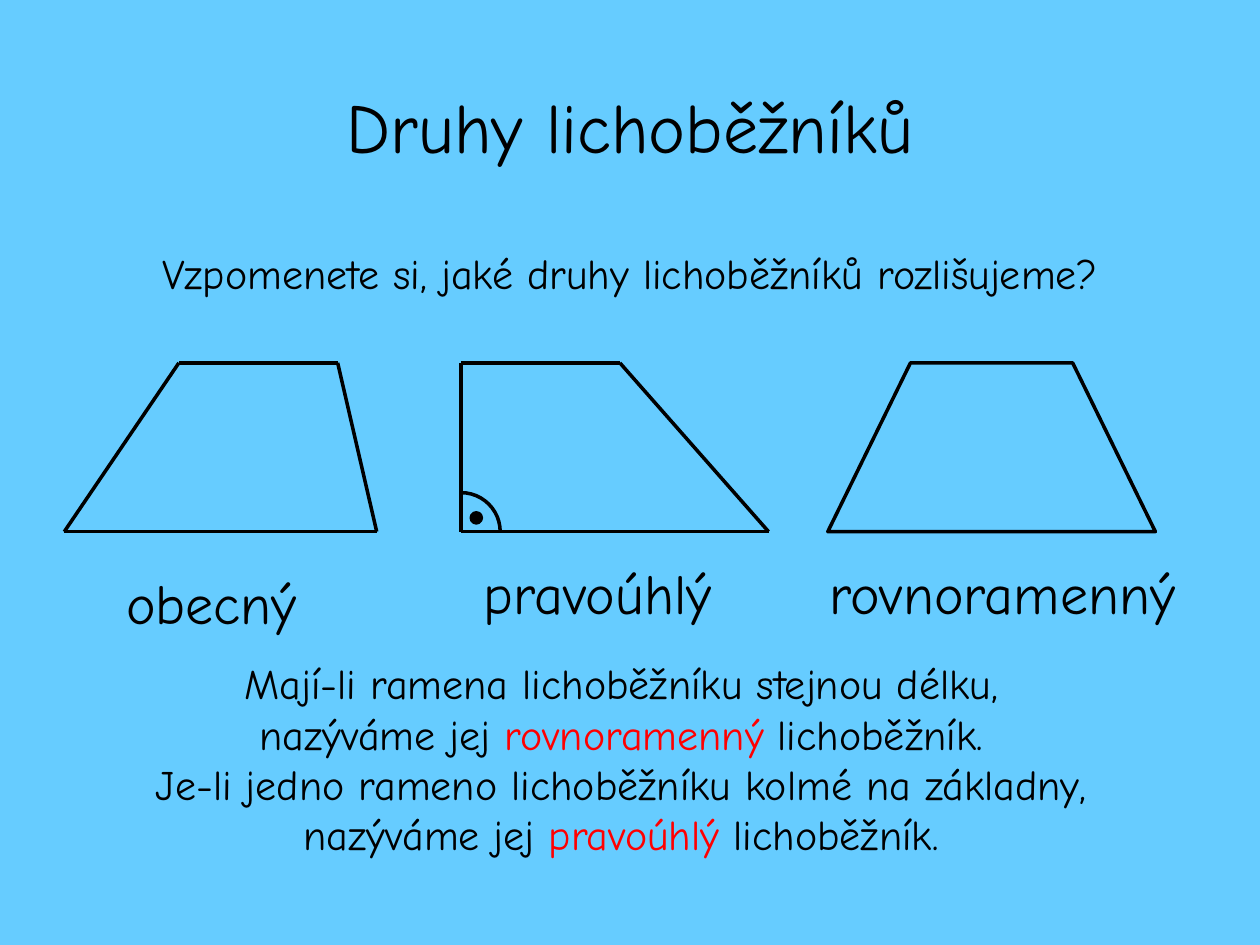
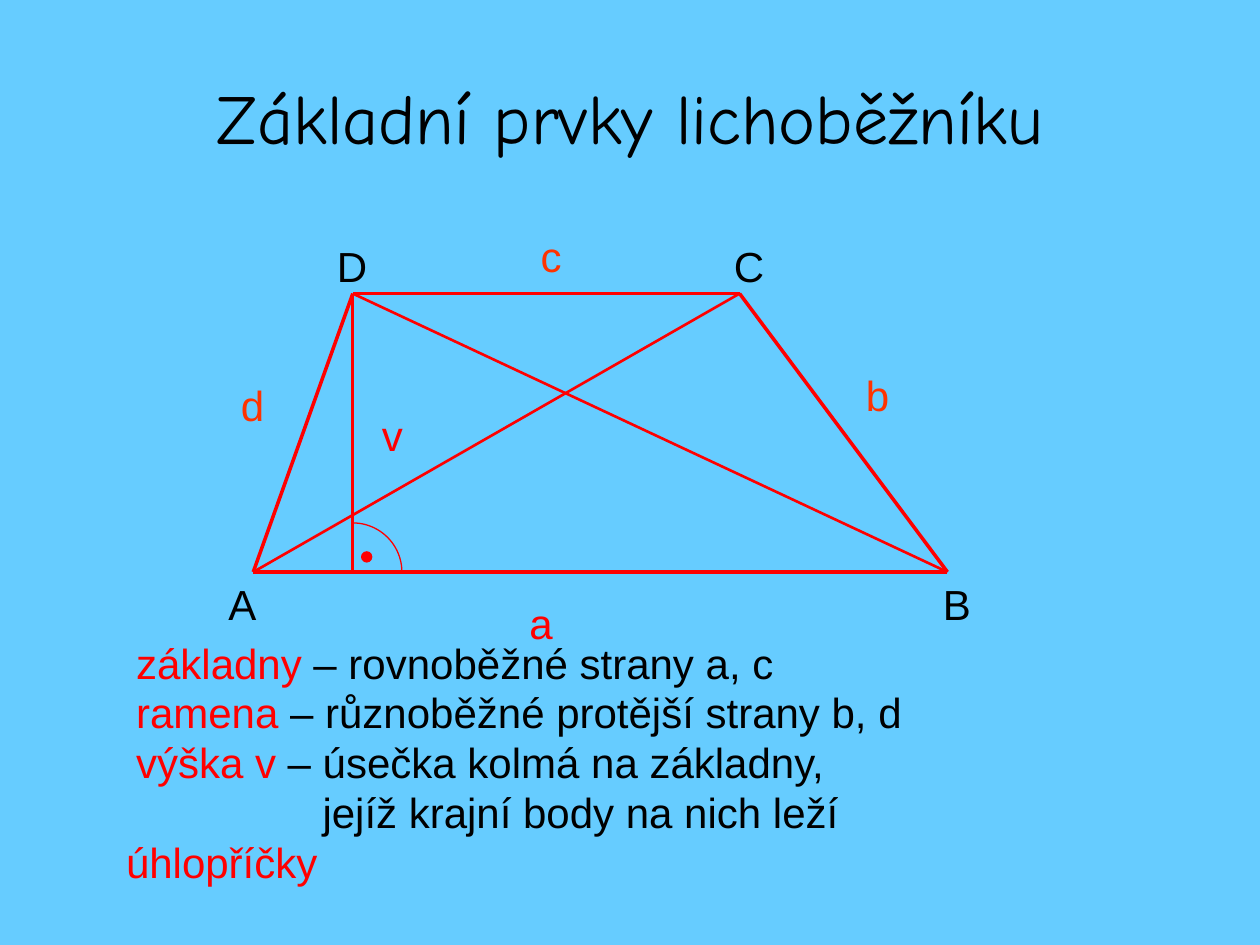
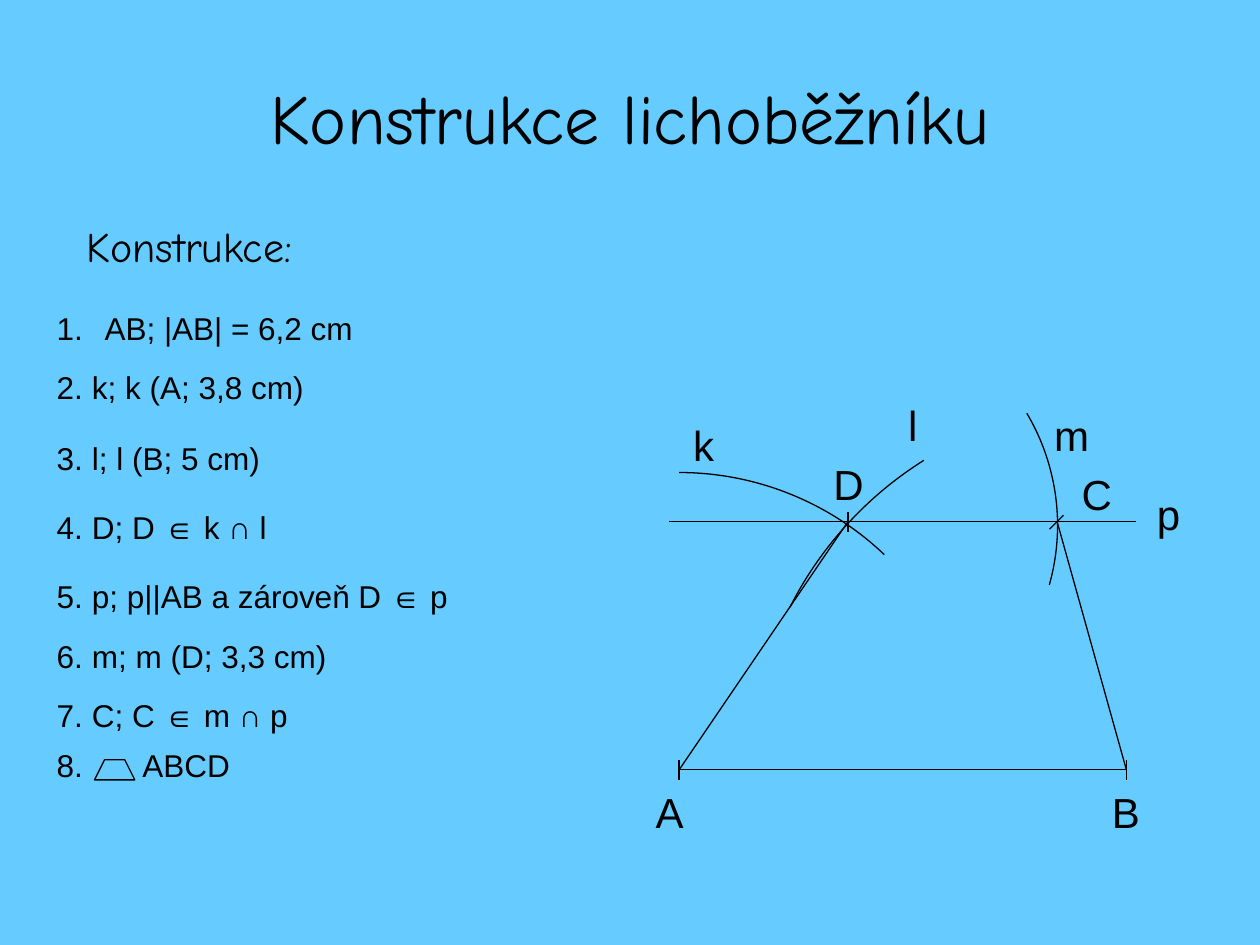
"""Build three slides on trapezoids: kinds, basic parts and construction."""
from math import atan2, degrees, hypot

from lxml.etree import SubElement
from pptx import Presentation
from pptx.dml.color import RGBColor
from pptx.enum.shapes import MSO_CONNECTOR as Link, MSO_SHAPE as Form
from pptx.enum.text import MSO_ANCHOR as Anchor, MSO_AUTO_SIZE as Fit, PP_ALIGN as Align
from pptx.oxml.ns import qn
from pptx.util import Inches, Pt

SKY = RGBColor(0x66, 0xCC, 0xFF)
BLACK = RGBColor(0, 0, 0)
RED = RGBColor(0xFF, 0, 0)
ORANGE = RGBColor(0xFF, 0x33, 0)
COMIC, ARIAL = "Comic Neue", "Arial"

KINDS = "Druhy lichoběžníků"
QUERY = "Vzpomenete si, jaké druhy lichoběžníků rozlišujeme?"
RULES = [
    [("Mají-li ramena lichoběžníku stejnou délku,", BLACK)],
    [("nazýváme jej ", BLACK), ("rovnoramenný ", RED), ("lichoběžník.", BLACK)],
    [("Je-li jedno rameno lichoběžníku kolmé na základny,", BLACK)],
    [("nazýváme jej ", BLACK), ("pravoúhlý ", RED), ("lichoběžník.", BLACK)],
]
QUADS = [
    [(0.51, 4.22), (2.99, 4.22), (2.68, 2.88), (1.42, 2.88)],
    [(3.66, 4.22), (6.1, 4.22), (4.92, 2.88), (3.66, 2.88)],
]
NAMES = [
    ("pravoúhlý", (3.74, 4.38, 2.28, 1.06), Align.LEFT),
    ("rovnoramenný", (6.34, 4.38, 3.23, 1.06), Align.CENTER),
]

PARTS = "Základní prvky lichoběžníku"
PART_PTS = {"A": (2.01, 4.54), "B": (7.52, 4.54), "C": (5.87, 2.33), "D": (2.8, 2.33)}
FOOT = (2.8, 4.54)
PART_TAGS = [
    ("a", 3.98, 4.69, RED), ("c", 4.06, 1.78, ORANGE), ("b", 6.65, 2.88, ORANGE),
    ("d", 1.69, 2.96, ORANGE), ("v", 2.8, 3.2, RED), ("A", 1.61, 4.54, BLACK),
    ("B", 7.28, 4.54, BLACK), ("C", 5.63, 1.86, BLACK), ("D", 2.48, 1.86, BLACK),
]
TERMS = [
    (0.08, [("základny", RED), (" – rovnoběžné strany a, c", BLACK)]),
    (0.08, [("ramena", RED), (" – různoběžné protější strany b, d", BLACK)]),
    (0.08, [("výška v", RED), (" – úsečka kolmá na základny,", BLACK)]),
    (1.56, [("jejíž krajní body na nich leží", BLACK)]),
    (0, [("úhlopříčky", RED)]),
]

BUILD = "Konstrukce lichoběžníku"
STEPS = [
    ("AB; |AB| = 6,2 cm", 0.38, 0),
    ("k; k (A; 3,8 cm)", 0.28, 0.47),
    ("l; l (B; 5 cm)", 0.28, 0.56),
    ("D; D ∈ k ∩ l", 0.28, 0.55),
    ("p; p||AB a zároveň D ∈ p", 0.28, 0.55),
    ("m; m (D; 3,3 cm)", 0.28, 0.47),
    ("C; C ∈ m ∩ p", 0.28, 0.47),
    ("ABCD", 0.68, 0.4),
]
STEP_PT = 21
A, B, C, D = (5.39, 6.11), (8.94, 6.11), (8.39, 4.14), (6.73, 4.14)
LINES = [(A, B), (B, C), (D, A), ((5.31, 4.14), (9.02, 4.14)), ((8.44, 4.09), (8.33, 4.2))]
ARCS = [
    (A, (5.39, 3.75), (7.02, 4.4)),
    ((8.9, 6.15), (6.27, 4.82), (7.33, 3.65)),
    ((6.65, 4.17), (8.15, 3.28), (8.32, 4.64)),
]
BUILD_TAGS = [
    ("D", 6.5, 3.59, 0.47), ("A", 5.08, 6.19, 0.47), ("B", 8.7, 6.19, 0.47),
    ("C", 8.47, 3.67, 0.47), ("k", 5.31, 3.28, 0.55), ("l", 6.97, 3.12, 0.55),
    ("m", 8.23, 3.2, 0.55), ("p", 9, 3.83, 0.55),
]


def place(shape, box):
    shape.left, shape.top, shape.width, shape.height = map(Inches, box)
    return shape


def style(para, size, font=ARIAL, color=BLACK, align=Align.LEFT):
    para.font.size, para.font.name = Pt(size), font
    para.font.color.rgb = color
    para.alignment = align
    para.space_before = Pt(0)


def write(para, runs):
    for text, color in runs:
        run = para.add_run()
        run.text = text
        if color != BLACK:
            run.font.color.rgb = color


def paras(frame, count):
    for _ in range(count - 1):
        frame.add_paragraph()
    return frame.paragraphs


def hang(para, left, first=0, mark="a:buNone", **kind):
    props = para._p.get_or_add_pPr()
    props.set("marL", str(Inches(left)))
    props.set("indent", str(Inches(first)))
    bullet = props.makeelement(qn(mark), kind)
    props.insert_element_before(bullet, "a:tabLst", "a:defRPr", "a:extLst")


def label(slide, text, box, size=24, font=ARIAL, color=BLACK, align=Align.CENTER):
    frame = slide.shapes.add_textbox(*map(Inches, box)).text_frame
    frame.word_wrap = True
    frame.text = text
    style(frame.paragraphs[0], size, font, color, align)
    return frame


def line(slide, start, end, color=BLACK, width=0.75):
    link = slide.shapes.add_connector(Link.STRAIGHT, *map(Inches, (*start, *end)))
    link.line.color.rgb, link.line.width = color, Pt(width)
    SubElement(link._element.spPr, qn("a:effectLst"))


def loop(slide, points, color, width):
    for start, end in zip(points, points[1:] + points[:1]):
        line(slide, start, end, color, width)


def draw(slide, form, box, color=BLACK, width=0.75, solid=False):
    shape = slide.shapes.add_shape(form, *map(Inches, box))
    shape.shadow.inherit = False
    shape.line.color.rgb, shape.line.width = color, Pt(width)
    if solid:
        shape.fill.solid()
        shape.fill.fore_color.rgb = color
    else:
        shape.fill.background()
    return shape


def arc(slide, mid, start, end, color=BLACK, width=0.75):
    x, y = mid
    rad = hypot(start[0] - x, start[1] - y)
    shape = draw(slide, Form.ARC, (x - rad, y - rad, 2 * rad, 2 * rad), color, width)
    for i, (px, py) in enumerate((start, end)):
        shape.adjustments[i] = degrees(atan2(py - y, px - x)) % 360 * 0.6


def right(slide, mid, rad, dot, color, width):
    x, y = mid
    arc(slide, mid, (x, y - rad), (x + rad, y), color, width)
    draw(slide, Form.OVAL, (*dot, 0.08, 0.08), color, width, True)


def page(deck, title, body, high=1.25):
    slide = deck.slides.add_slide(deck.slide_layouts[1])
    head = place(slide.shapes.title, (0.5, 0.3, 9, high)).text_frame
    head.vertical_anchor = Anchor.MIDDLE
    head.text = title
    style(head.paragraphs[0], 40, COMIC, align=Align.CENTER)
    text = place(slide.placeholders[1], body).text_frame
    for frame in (head, text):
        frame.word_wrap, frame.auto_size = True, Fit.NONE
    return slide, head, text


def kinds(deck):
    slide, head, text = page(deck, KINDS, (0.9, 4.46, 1.66, 0.66), 2.43)
    ask = head.add_paragraph()
    ask.text = QUERY
    style(ask, 24, COMIC, align=Align.CENTER)
    ask.space_before = Pt(46)
    text.text = "obecný"
    style(text.paragraphs[0], 32, COMIC)
    hang(text.paragraphs[0], 0)
    for quad in QUADS:
        loop(slide, quad, BLACK, 2)
    right(slide, QUADS[1][0], 0.31, (3.74, 4.07), BLACK, 2)
    even = draw(slide, Form.TRAPEZOID, (6.57, 2.88, 2.6, 1.34), width=2)
    even.adjustments[0] = 0.49
    for name, box, align in NAMES:
        label(slide, name, box, 32, COMIC, align=align)
    frame = label(slide, "", (0.43, 5.27, 9, 1.5))
    frame.vertical_anchor = Anchor.MIDDLE
    for para, runs in zip(paras(frame, len(RULES)), RULES):
        write(para, runs)
        style(para, 24, COMIC, align=Align.CENTER)


def parts(deck):
    slide, _, text = page(deck, PARTS, (0.9, 5.01, 6.46, 2.08))
    pts = PART_PTS
    loop(slide, list(pts.values()), RED, 2)
    for start, end in ((pts["D"], FOOT), (pts["A"], pts["C"]), (pts["D"], pts["B"])):
        line(slide, start, end, RED, 1.5)
    right(slide, FOOT, 0.39, (2.87, 4.38), RED, 0.75)
    for tag, x, y, color in PART_TAGS:
        label(slide, tag, (x, y, 0.63, 0.5), color=color)
    for para, (left, runs) in zip(paras(text, len(TERMS)), TERMS):
        write(para, runs)
        style(para, 24)
        para.line_spacing = Pt(28.5)
        hang(para, left)


def build(deck):
    slide, _, text = page(deck, BUILD, (0.35, 2.41, 4.2, 3.87))
    label(slide, "Konstrukce:", (0.59, 1.7, 2.6, 0.5), font=COMIC, align=Align.LEFT)
    for para, (step, left, gap) in zip(paras(text, len(STEPS)), STEPS):
        para.text = step
        style(para, 18)
        para.line_spacing = Pt(STEP_PT)
        para.space_before = Pt(max(0, gap * 72 - STEP_PT))
        hang(para, left, -left, "a:buAutoNum", type="arabicPeriod")
    icon = draw(slide, Form.TRAPEZOID, (0.75, 6.03, 0.32, 0.16))
    icon.adjustments[0] = 0.5
    ticks = [((x, y - 0.08), (x, y + 0.08)) for x, y in (A, B, D)]
    for start, end in LINES + ticks:
        line(slide, start, end)
    for mid, start, end in ARCS:
        arc(slide, mid, start, end)
    for tag, x, y, wide in BUILD_TAGS:
        label(slide, tag, (x, y, wide, 0.5))


def main():
    deck = Presentation()
    deck.slide_width, deck.slide_height = Inches(10), Inches(7.5)
    back = deck.slide_master.background.fill
    back.solid()
    back.fore_color.rgb = SKY
    for make in (kinds, parts, build):
        make(deck)
    deck.save("out.pptx")


if __name__ == "__main__":
    main()
